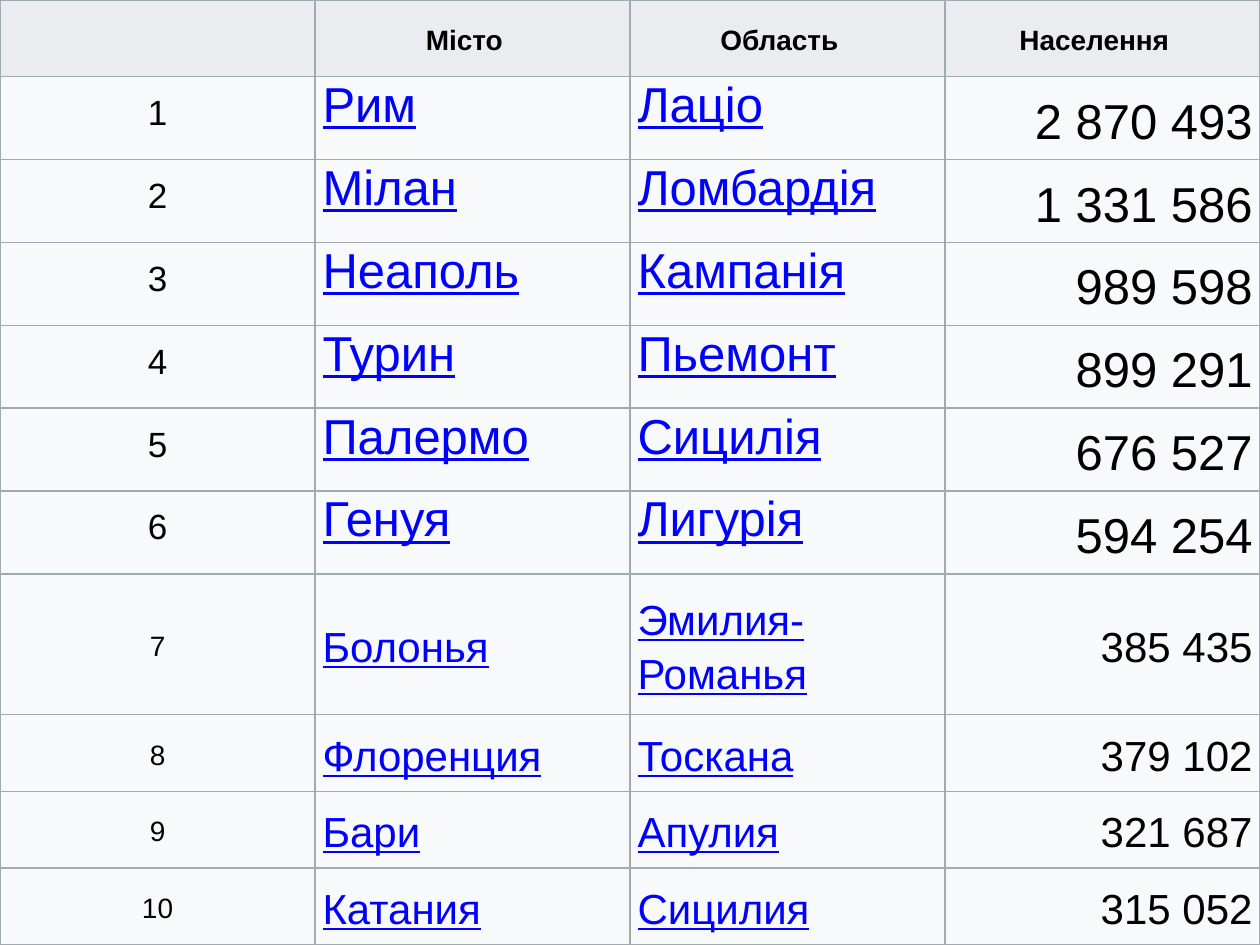
from pptx import Presentation
from pptx.dml.color import RGBColor
from pptx.enum.text import MSO_ANCHOR, PP_ALIGN
from pptx.oxml import parse_xml
from pptx.oxml.ns import nsdecls
from pptx.util import Inches, Pt

# Content
HEADERS = ["", "Місто", "Область", "Населення"]
CITIES = [
    ("Рим", "Лаціо", 2870493),
    ("Мілан", "Ломбардія", 1331586),
    ("Неаполь", "Кампанія", 989598),
    ("Турин", "Пьемонт", 899291),
    ("Палермо", "Сицилія", 676527),
    ("Генуя", "Лигурія", 594254),
    ("Болонья", "Эмилия-Романья", 385435),
    ("Флоренция", "Тоскана", 379102),
    ("Бари", "Апулия", 321687),
    ("Катания", "Сицилия", 315052),
]
LARGE_ROWS = 6  # the leading cities are set in larger type
NBSP = chr(160)

THEME = {
    "font": "Arial", "background": "EEECE1", "border": "A2A9B1",
    "header": "EAECF0", "body": "F8F9FA", "text": "000000", "link": "0000FF",
    "header_size": 16,
    "large": {"rank": 20, "main": 28},
    "small": {"rank": 16, "main": 24},
}

# Layout
WIDTH, HEIGHT = 10, 7.5
ROW_WEIGHTS = [0.61] + [0.66] * LARGE_ROWS + [1.12] + [0.61] * 3
LEFT, CENTER, RIGHT = PP_ALIGN.LEFT, PP_ALIGN.CENTER, PP_ALIGN.RIGHT


def rgb(name):
    return RGBColor.from_string(THEME[name])


def style_cell(cell, fill, right=0.06):
    cell.fill.solid()
    cell.fill.fore_color.rgb = rgb(fill)
    cell.vertical_anchor = MSO_ANCHOR.MIDDLE
    margins = {"left": 0.06, "top": 0.03, "right": right, "bottom": 0.03}
    for side, size in margins.items():
        setattr(cell, f"margin_{side}", Inches(size))
    # Borders come before the fill in the cell properties
    tc_pr = cell._tc.get_or_add_tcPr()
    for i, side in enumerate(("lnL", "lnR", "lnT", "lnB")):
        tc_pr.insert(i, parse_xml(
            f'<a:{side} {nsdecls("a")} w="{Pt(1)}"><a:solidFill>'
            f'<a:srgbClr val="{THEME["border"]}"/></a:solidFill></a:{side}>'))


def write_cell(cell, text, size, align, color="text", spacing=1.15, **extra):
    p = cell.text_frame.paragraphs[0]
    layout = {"alignment": align, "line_spacing": spacing,
              "space_before": Pt(12), "space_after": Pt(12)}
    for name, value in layout.items():
        setattr(p, name, value)
    r = p.add_run()
    r.text = text
    font = {"name": THEME["font"], "size": Pt(size), "bold": False, **extra}
    for name, value in font.items():
        setattr(r.font, name, value)
    r.font.color.rgb = rgb(color)


def main():
    prs = Presentation()
    prs.slide_width, prs.slide_height = Inches(WIDTH), Inches(HEIGHT)
    s = prs.slides.add_slide(prs.slide_layouts[6])
    s.background.fill.solid()
    s.background.fill.fore_color.rgb = rgb("background")

    # Table grid fills the slide
    table = s.shapes.add_table(len(CITIES) + 1, len(HEADERS), 0, 0,
                               prs.slide_width, prs.slide_height).table
    table.horz_banding = False
    for column in table.columns:
        column.width = Inches(WIDTH / len(HEADERS))
    for row, weight in zip(table.rows, ROW_WEIGHTS):
        row.height = Inches(HEIGHT * weight / sum(ROW_WEIGHTS))

    # Header row
    for cell, text in zip(table.rows[0].cells, HEADERS):
        style_cell(cell, "header", right=0.19)
        if text:
            write_cell(cell, text, THEME["header_size"], CENTER, bold=True)

    # City rows
    for rank, (city, region, population) in enumerate(CITIES, 1):
        large = rank <= LARGE_ROWS
        sizes = THEME["large" if large else "small"]
        spacing = Pt(16.8) if large else 1.15
        link = {"color": "link", "spacing": spacing, "underline": True}
        number = f"{population:,}".replace(",", NBSP)
        entries = [
            (str(rank), sizes["rank"], CENTER, {"spacing": spacing}),
            (city, sizes["main"], LEFT, link),
            (region, sizes["main"], LEFT, link),
            (number, sizes["main"], RIGHT, {}),
        ]
        for cell, (text, size, align, extra) in zip(table.rows[rank].cells, entries):
            style_cell(cell, "body")
            write_cell(cell, text, size, align, **extra)

    prs.save("out.pptx")


if __name__ == "__main__":
    main()
